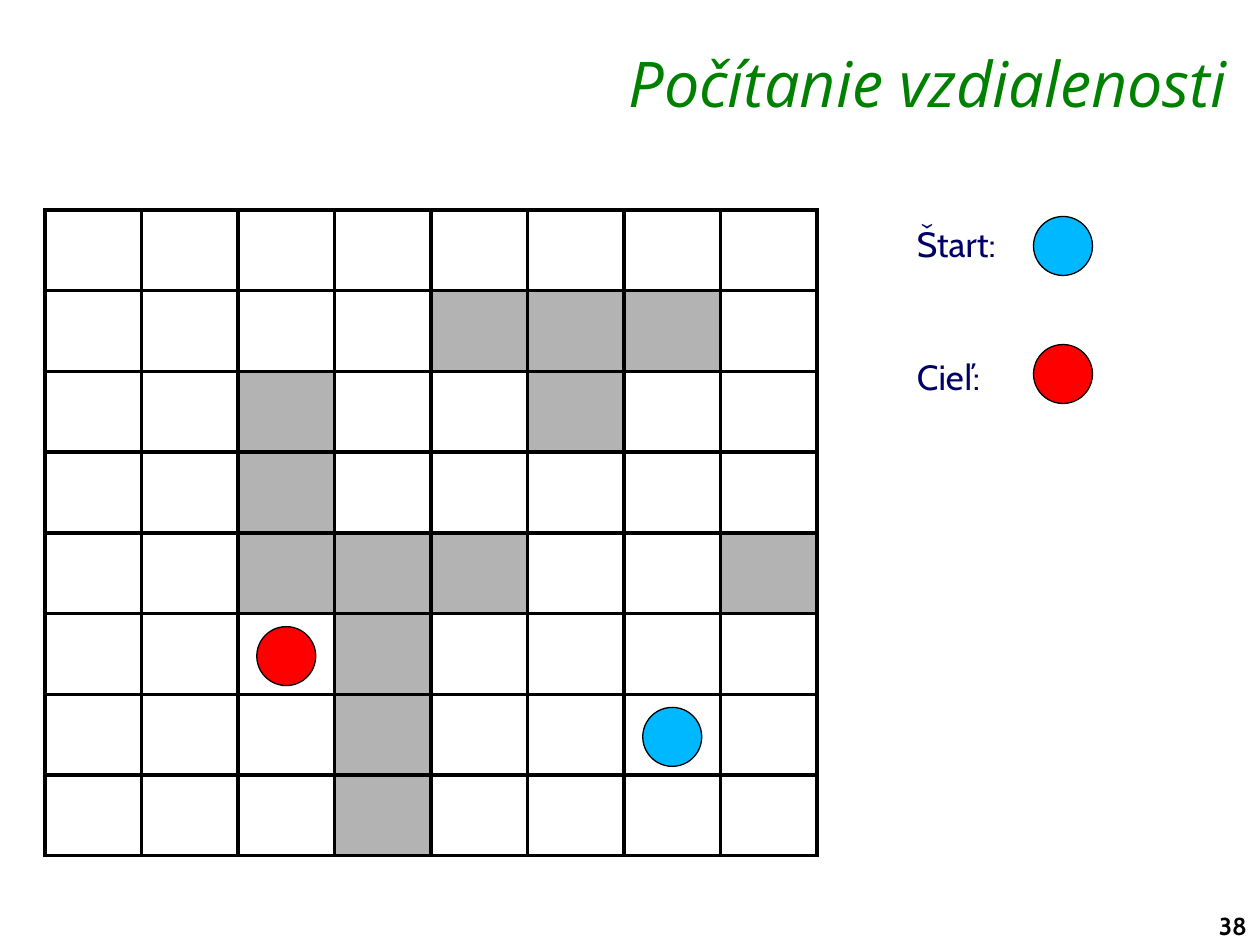
from lxml import etree
from pptx import Presentation
from pptx.dml.color import RGBColor
from pptx.enum.shapes import MSO_SHAPE
from pptx.enum.text import MSO_ANCHOR, PP_ALIGN
from pptx.oxml.ns import qn
from pptx.util import Emu, Pt

OVAL = MSO_SHAPE.OVAL
TOP = MSO_ANCHOR.TOP
LEFT, RIGHT = PP_ALIGN.LEFT, PP_ALIGN.RIGHT

COLORS = {
    "title": "008000", "label": "000066", "black": "000000",
    "free": "FFFFFF", "wall": "B3B3B3",
    "start": "00B8FF", "goal": "FF0000",
}
TITLE = "Počítanie vzdialenosti"
LABELS = ["Štart:", "Cieľ:"]
PAGE_NUMBER = "38"
MAZE = [
    "........",
    "....###.",
    "..#..#..",
    "..#.....",
    "..###..#",
    "..G#....",
    "...#..S.",
    "...#....",
]
MARKERS = {"S": "start", "G": "goal"}
LEGEND = [("start", 1063, 246), ("goal", 1063, 374)]

GRID_LEFT, GRID_TOP, GRID_WIDTH, GRID_HEIGHT = 45, 210, 772, 646
CELL_WIDTH = GRID_WIDTH / len(MAZE[0])
CELL_HEIGHT = GRID_HEIGHT / len(MAZE)
DISC = 59
DISC_DROP = 2


def px(value):
    return Emu(round(value * 914400 / 126))


def color(name):
    return RGBColor.from_string(COLORS[name])


def place(shape, left, top, width, height):
    shape.left, shape.top = px(left), px(top)
    shape.width, shape.height = px(width), px(height)


def write(shape, lines, font, size, ink, align=LEFT, bold=False, italic=False,
          gap=0, inset=13, inset_top=6):
    frame = shape.text_frame
    frame.word_wrap = True
    frame.vertical_anchor = TOP
    frame.margin_left, frame.margin_right = px(inset), px(13)
    frame.margin_top, frame.margin_bottom = px(inset_top), px(6)
    for index, line in enumerate(lines):
        para = frame.add_paragraph() if index else frame.paragraphs[0]
        para.alignment = align
        if index:
            para.space_before = Pt(gap)
        span = para.add_run()
        span.text = line
        span.font.name, span.font.size = font, Pt(size)
        span.font.bold, span.font.italic = bold, italic
        span.font.color.rgb = color(ink)


def add_disc(page, name, center_x, center_y):
    disc = page.shapes.add_shape(OVAL, px(center_x - DISC / 2), px(center_y - DISC / 2),
                                 px(DISC), px(DISC))
    disc.shadow.inherit = False
    disc.fill.solid()
    disc.fill.fore_color.rgb = color(name)
    disc.line.color.rgb = color("black")
    disc.line.width = Pt(0.75)


def format_cell(cell, fill):
    properties = cell._tc.get_or_add_tcPr()
    for side in ("a:lnL", "a:lnR", "a:lnT", "a:lnB"):
        border = etree.SubElement(properties, qn(side), w=str(Pt(2.25)))
        solid = etree.SubElement(border, qn("a:solidFill"))
        etree.SubElement(solid, qn("a:srgbClr"), val=COLORS["black"])
    cell.fill.solid()
    cell.fill.fore_color.rgb = color(fill)


def add_maze(page):
    frame = page.shapes.add_table(len(MAZE), len(MAZE[0]), px(GRID_LEFT), px(GRID_TOP),
                                  px(GRID_WIDTH), px(GRID_HEIGHT))
    grid = frame.table
    grid.first_row = grid.horz_banding = False
    for column in grid.columns:
        column.width = px(CELL_WIDTH)
    for row in grid.rows:
        row.height = px(CELL_HEIGHT)
    for y, line in enumerate(MAZE):
        for x, mark in enumerate(line):
            format_cell(grid.cell(y, x), "wall" if mark == "#" else "free")
            if mark in MARKERS:
                add_disc(page, MARKERS[mark], GRID_LEFT + (x + 0.5) * CELL_WIDTH,
                         GRID_TOP + (y + 0.5) * CELL_HEIGHT + DISC_DROP)


def main():
    deck = Presentation()
    deck.slide_width, deck.slide_height = px(1260), px(945)
    page = deck.slides.add_slide(deck.slide_layouts[5])

    title = page.shapes.title
    place(title, 289, 39, 951, 73)
    write(title, [TITLE], "Open Sans", 36, "title", align=RIGHT, italic=True, inset_top=5)

    add_maze(page)

    labels = page.shapes.add_textbox(px(857), px(217), px(364), px(253))
    write(labels, LABELS, "Cabin", 20, "label", gap=52, inset=60)
    for name, center_x, center_y in LEGEND:
        add_disc(page, name, center_x, center_y)

    number = page.shapes.add_textbox(px(1206), px(905), px(64), px(42))
    write(number, [PAGE_NUMBER], "Cabin", 14, "black", bold=True)

    deck.save("out.pptx")


if __name__ == "__main__":
    main()
